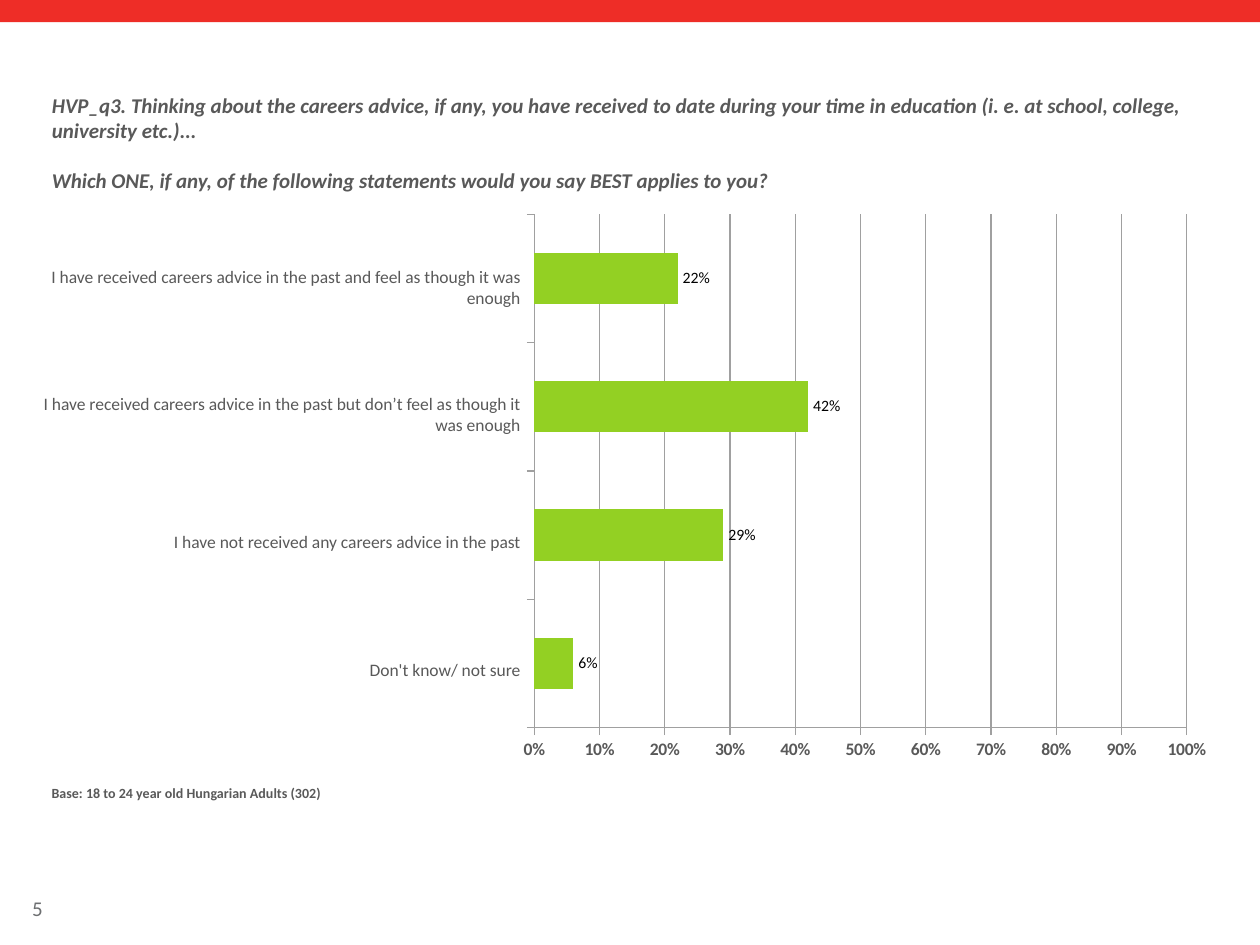
import lxml.etree
import pptx
import pptx.chart.data
import pptx.dml.color
import pptx.enum.chart
import pptx.enum.shapes
import pptx.enum.text
import pptx.oxml
import pptx.util

Cm = pptx.util.Cm
Pt = pptx.util.Pt
Align = pptx.enum.text.PP_ALIGN
Anchor = pptx.enum.text.MSO_ANCHOR
Chart = pptx.enum.chart

HUES = {"band": "EE2D27", "text": "595959", "page": "6D6F71",
        "bar": "93D023", "grid": "A0A0A0", "value": "000000"}
FACE = "Calibri"
QUERY = [
    "HVP_q3. Thinking about the careers advice, if any, you have received to date "
    "during your time in education (i. e. at school, college, university etc.)...",
    "Which ONE, if any, of the following statements would you say BEST applies to you?",
]
ROWS = [  # top to bottom
    ("I have received careers advice in the past and feel as though it was enough", 0.22),
    ("I have received careers advice in the past but don’t feel as though it was enough", 0.42),
    ("I have not received any careers advice in the past", 0.29),
    ("Don't know/ not sure", 0.06),
]


def color(key):
    return pptx.dml.color.RGBColor.from_string(HUES[key])


def assign(item, values):
    for name, value in values.items():
        setattr(item, name, value)


def style(font, size, hue="text", **more):
    assign(font, {"name": FACE, "size": Pt(size), **more})
    font.color.rgb = color(hue)


def place(shape, box):
    assign(shape, dict(zip(("left", "top", "width", "height"), map(Cm, box))))


def write(shape, lines, size, hue="text", anchor=Anchor.TOP, align=Align.LEFT, gap=0, **more):
    """Fill a text shape with one paragraph per line, gap points apart."""
    frame = shape.text_frame
    assign(frame, {"word_wrap": True, "vertical_anchor": anchor,
                   "auto_size": pptx.enum.text.MSO_AUTO_SIZE.NONE})
    frame.text = "\n".join(lines)
    for i, para in enumerate(frame.paragraphs):
        assign(para, {"alignment": align, "space_before": Pt(gap if i else 0)})
        for run in para.runs:
            style(run.font, size, hue, **more)


def note(slide, box, text, size, **more):
    write(slide.shapes.add_textbox(*map(Cm, box)), [text], size, **more)


def band(slide, box):
    bar = slide.shapes.add_shape(pptx.enum.shapes.MSO_SHAPE.RECTANGLE, *map(Cm, box))
    bar.shadow.inherit = False
    bar.fill.solid()
    bar.fill.fore_color.rgb = color("band")
    bar.line.fill.background()


def title(slide, box):
    place(slide.shapes.title, box)
    write(slide.shapes.title, QUERY, 12, gap=14.4, bold=True, italic=True)


def labels(slide, box):
    """Stack the statements in equal rows, beside their bars."""
    left, top, width, height = box
    step = height / len(ROWS)
    for i, (text, _) in enumerate(ROWS):
        note(slide, (left, top + i * step, width, step), text, 10,
             anchor=Anchor.MIDDLE, align=Align.RIGHT)


def frame_plot(chart, x, y, w, h):
    """Fix the inner plot area as shares of the chart box."""
    area = chart._chartSpace.chart.plotArea
    for old in area.findall(pptx.oxml.ns.qn("c:layout")):
        area.remove(old)
    layout = pptx.oxml.parse_xml(
        f'<c:layout {pptx.oxml.ns.nsdecls("c")}><c:manualLayout>'
        '<c:layoutTarget val="inner"/><c:xMode val="edge"/><c:yMode val="edge"/>'
        f'<c:x val="{x}"/><c:y val="{y}"/><c:w val="{w}"/><c:h val="{h}"/>'
        '</c:manualLayout></c:layout>')
    area.insert(0, layout)


def bars(slide, box):
    data = pptx.chart.data.CategoryChartData(number_format="0%")
    data.categories = [str(i + 1) for i in range(len(ROWS))]
    data.add_series("Series 1", [value for _, value in reversed(ROWS)])
    chart = slide.shapes.add_chart(
        Chart.XL_CHART_TYPE.BAR_CLUSTERED, *map(Cm, box), data).chart
    assign(chart, {"has_legend": False, "has_title": False})
    style(chart.font, 18, "page", name="Manrope")
    frame_plot(chart, 0.03, 0.02, 0.92, 0.9)

    plot = chart.plots[0]
    assign(plot, {"gap_width": 150, "overlap": -10, "vary_by_categories": False,
                  "has_data_labels": True})
    assign(plot.data_labels, {"show_value": True, "number_format": "0%",
                              "number_format_is_linked": False,
                              "position": Chart.XL_LABEL_POSITION.OUTSIDE_END})
    style(plot.data_labels.font, 9, "value")
    fill = plot.series[0].format.fill
    fill.solid()
    fill.fore_color.rgb = color("bar")

    spot = Chart.XL_TICK_LABEL_POSITION
    out = Chart.XL_TICK_MARK.OUTSIDE
    none = Chart.XL_TICK_MARK.NONE
    cats, vals = chart.category_axis, chart.value_axis
    assign(cats, {"tick_label_position": spot.NONE, "has_major_gridlines": False})
    assign(vals, {"minimum_scale": 0, "maximum_scale": 1, "major_unit": 0.1,
                  "has_major_gridlines": True, "tick_label_position": spot.LOW})
    assign(vals.tick_labels, {"number_format": "0%", "number_format_is_linked": False})
    for axis in (cats, vals):
        assign(axis, {"major_tick_mark": out, "minor_tick_mark": none})
        style(axis.tick_labels.font, 10, bold=axis is vals)
    for part in (cats, vals, vals.major_gridlines):
        part.format.line.color.rgb = color("grid")
        part.format.line.width = Pt(0.75)


def main():
    deck = pptx.Presentation()
    assign(deck, {"slide_width": Cm(25.4), "slide_height": Cm(19.05)})
    slide = deck.slides.add_slide(deck.slide_layouts.get_by_name("Title Only"))
    band(slide, (0, 0, 25.4, 0.45))
    title(slide, (0.79, 1.73, 23.85, 2.36))
    bars(slide, (10.34, 4.09, 14.3, 11.5))
    labels(slide, (0.4, 4.5, 10.34, 10.28))
    note(slide, (0.79, 15.7, 23.85, 1.09),
         "Base: 18 to 24 year old Hungarian Adults (302)", 8, bold=True)
    note(slide, (0.4, 17.93, 1.95, 0.77), "5", 12, hue="page", anchor=Anchor.MIDDLE)
    deck.save("out.pptx")


if __name__ == "__main__":
    main()
